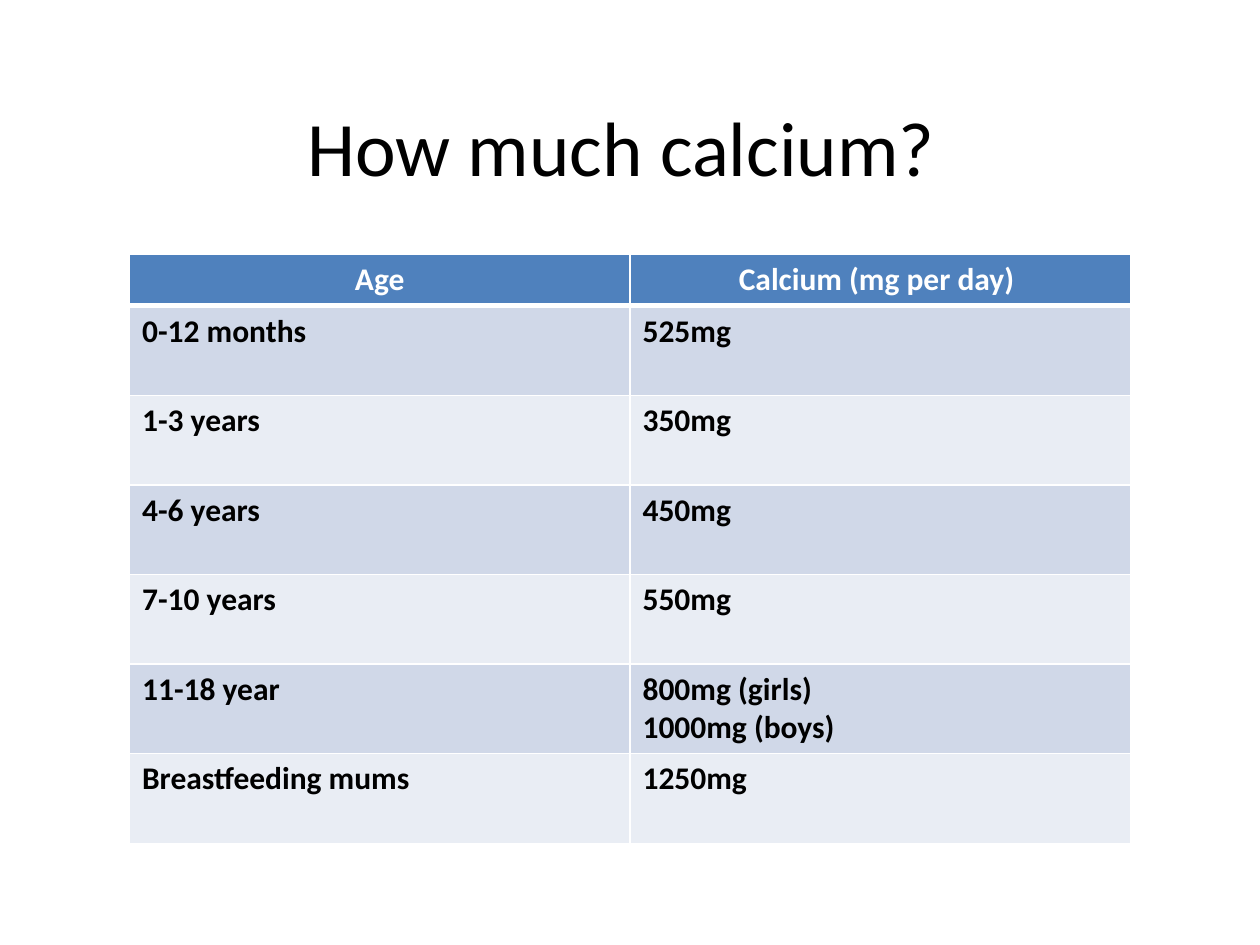
from dataclasses import dataclass

from lxml.etree import SubElement
from pptx import Presentation
from pptx.dml.color import RGBColor
from pptx.enum.text import MSO_ANCHOR, PP_ALIGN
from pptx.oxml.ns import qn
from pptx.util import Pt


@dataclass(frozen=True)
class Theme:
    font: str = "Calibri"
    title_size: int = 44
    table_size: int = 18
    text: str = "000000"
    header_text: str = "FFFFFF"
    header_fill: str = "4F81BD"
    bands: tuple = ("D0D8E8", "E9EDF4")
    border: str = "FFFFFF"
    border_width: int = 1
    header_rule_width: int = 3


THEME = Theme()

ROWS = [
    ("Age", "Calcium (mg per day) "),
    ("0-12 months", "525mg"),
    ("1-3 years", "350mg"),
    ("4-6 years", "450mg"),
    ("7-10 years", "550mg"),
    ("11-18 year", "800mg (girls)\n1000mg (boys)"),
    ("Breastfeeding mums", "1250mg"),
]
HEADER_HEIGHT = 29.2
ROW_HEIGHT = 51.2


def set_attributes(target, values):
    for name, value in values.items():
        setattr(target, name, value)


def write_text(text_frame, text, size, color, bold, alignment):
    text_frame.text = text
    for paragraph in text_frame.paragraphs:
        paragraph.alignment = alignment
        font = paragraph.runs[0].font
        set_attributes(font, {"name": THEME.font, "size": Pt(size), "bold": bold})
        font.color.rgb = RGBColor.from_string(color)


def add_title(slide, text):
    title = slide.shapes.title
    set_attributes(title, {
        "left": Pt(36), "top": Pt(38), "width": Pt(648), "height": Pt(90),
    })
    write_text(title.text_frame, text, THEME.title_size, THEME.text, False, PP_ALIGN.CENTER)
    title.text_frame.vertical_anchor = MSO_ANCHOR.MIDDLE


def add_border(cell, side, width):
    properties = cell._tc.get_or_add_tcPr()
    line = SubElement(properties, qn(f"a:ln{side}"), w=str(Pt(width)))
    fill = SubElement(line, qn("a:solidFill"))
    SubElement(fill, qn("a:srgbClr"), val=THEME.border)


def format_cell(cell, text, row_index):
    is_header = row_index == 0
    heavy_side = {0: "B", 1: "T"}.get(row_index)
    for side in "LRTB":
        width = THEME.header_rule_width if side == heavy_side else THEME.border_width
        add_border(cell, side, width)
    band = THEME.bands[(row_index - 1) % len(THEME.bands)]
    cell.fill.solid()
    cell.fill.fore_color.rgb = RGBColor.from_string(THEME.header_fill if is_header else band)
    write_text(
        cell.text_frame, text, THEME.table_size,
        THEME.header_text if is_header else THEME.text, True,
        PP_ALIGN.CENTER if is_header else PP_ALIGN.LEFT,
    )


def add_table(slide, rows):
    heights = [HEADER_HEIGHT] + [ROW_HEIGHT] * (len(rows) - 1)
    table = slide.shapes.add_table(
        len(rows), len(rows[0]), Pt(74), Pt(145.5), Pt(572), Pt(sum(heights)),
    ).table
    for row_index, (texts, height) in enumerate(zip(rows, heights)):
        table.rows[row_index].height = Pt(height)
        for column_index, text in enumerate(texts):
            format_cell(table.cell(row_index, column_index), text, row_index)


def main():
    presentation = Presentation()
    set_attributes(presentation, {"slide_width": Pt(720), "slide_height": Pt(540)})
    slide = presentation.slides.add_slide(presentation.slide_layouts.get_by_name("Title Only"))
    add_title(slide, "How much calcium? ")
    add_table(slide, ROWS)
    presentation.save("out.pptx")


if __name__ == "__main__":
    main()
